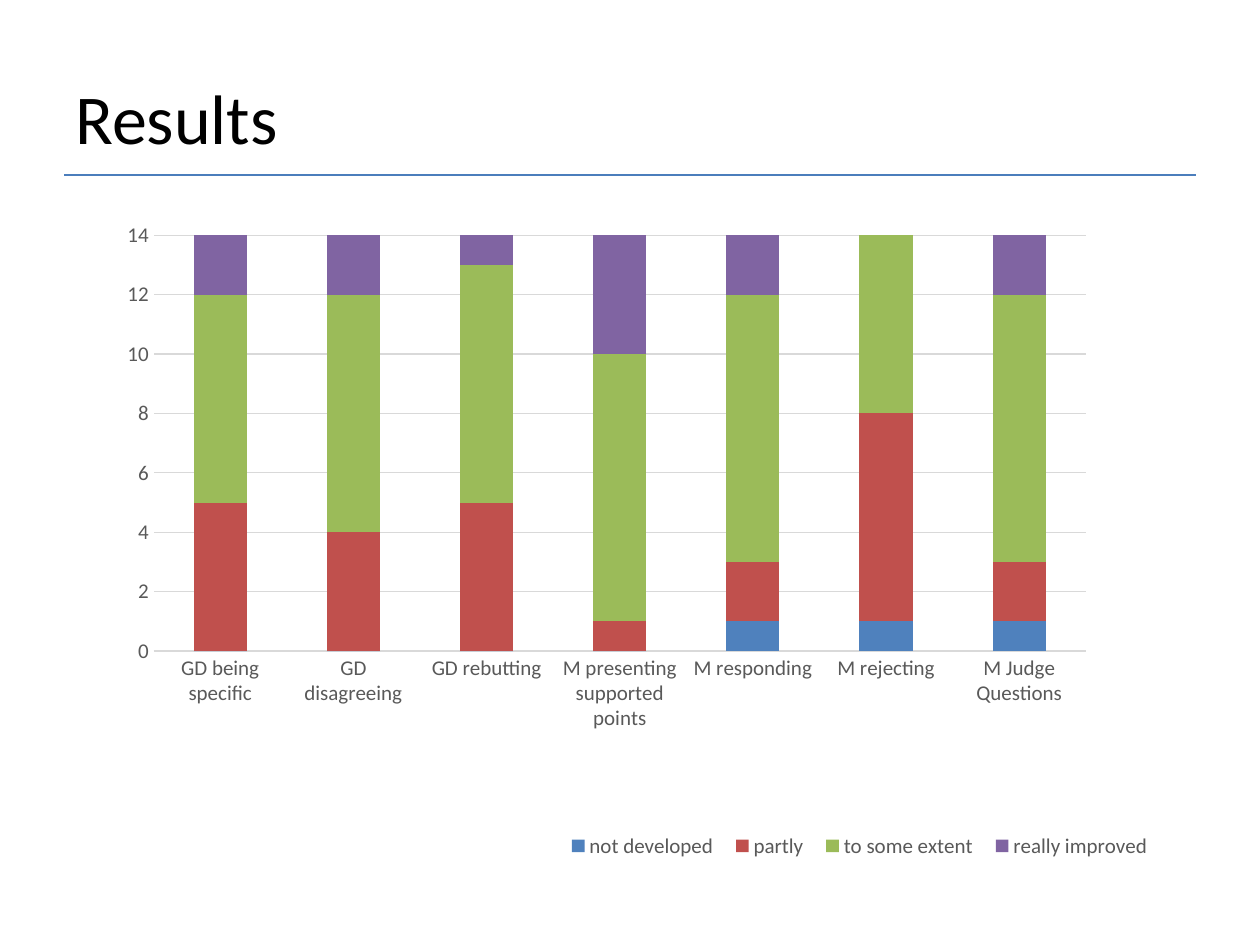
from lxml.etree import SubElement
from pptx import Presentation
from pptx.chart.data import CategoryChartData
from pptx.dml.color import RGBColor
from pptx.enum.chart import XL_CHART_TYPE, XL_LEGEND_POSITION, XL_TICK_MARK
from pptx.enum.shapes import MSO_CONNECTOR
from pptx.enum.text import MSO_ANCHOR
from pptx.oxml.ns import qn
from pptx.util import Cm, Pt

CATEGORIES = [
    "GD being specific", "GD disagreeing", "GD rebutting",
    "M presenting supported points", "M responding", "M rejecting",
    "M Judge Questions",
]
SERIES = [
    ("not developed", "4F81BD", (0, 0, 0, 0, 1, 1, 1)),
    ("partly", "C0504D", (5, 4, 5, 1, 2, 7, 2)),
    ("to some extent", "9BBB59", (7, 8, 8, 9, 9, 7, 9)),
    ("really improved", "8064A2", (9, 2, 1, 4, 2, 2, 2)),
]


def color(value):
    return RGBColor.from_string(value)


def style_font(font, name="Calibri", size=12, fill="000000"):
    font.name = name
    font.size = Pt(size)
    font.color.rgb = color(fill)


def write(p, text, **fmt):
    r = p.add_run()
    r.text = text
    style_font(r.font, **fmt)


def style_line(line, fill, width=0.75):
    line.color.rgb = color(fill)
    line.width = Pt(width)


def place(parent, index, x, y, w, h, inner=False):
    for old in parent.findall(qn("c:layout")):
        parent.remove(old)
    layout = SubElement(parent, qn("c:layout"))
    parent.insert(index, layout)
    manual = SubElement(layout, qn("c:manualLayout"))
    settings = [("layoutTarget", "inner")] if inner else []
    settings += [("xMode", "edge"), ("yMode", "edge"),
                 ("x", x), ("y", y), ("w", w), ("h", h)]
    for tag, value in settings:
        SubElement(manual, qn(f"c:{tag}")).set("val", str(value))


class SlideBuilder:
    font = "Calibri"
    muted = "595959"
    grid = "D9D9D9"
    rule_color = "4B7EBC"

    def __init__(self, prs):
        self.s = prs.slides.add_slide(prs.slide_layouts[6])

    def title(self, text, x, y, w, h):
        sp = self.s.shapes.add_textbox(Cm(x), Cm(y), Cm(w), Cm(h))
        tf = sp.text_frame
        tf.word_wrap = True
        tf.vertical_anchor = MSO_ANCHOR.MIDDLE
        write(tf.paragraphs[0], text, name=self.font, size=40)

    def rule(self, x1, x2, y):
        sp = self.s.shapes.add_connector(
            MSO_CONNECTOR.STRAIGHT, Cm(x1), Cm(y), Cm(x2), Cm(y))
        style_line(sp.line, self.rule_color)
        SubElement(sp.element.spPr, qn("a:effectLst"))

    def stacked_chart(self, categories, series, x, y, w, h):
        data = CategoryChartData()
        data.categories = categories
        for name, _, values in series:
            data.add_series(name, values)
        chart = self.s.shapes.add_chart(
            XL_CHART_TYPE.COLUMN_STACKED,
            Cm(x), Cm(y), Cm(w), Cm(h), data).chart
        style_font(chart.font, self.font, 10)
        chart.has_title = False

        plot = chart.plots[0]
        plot.gap_width = 150
        plot.overlap = 100
        plot.vary_by_categories = False
        for ser, (_, fill, _) in zip(plot.series, series):
            ser.format.fill.solid()
            ser.format.fill.fore_color.rgb = color(fill)

        for axis in (chart.category_axis, chart.value_axis):
            axis.major_tick_mark = XL_TICK_MARK.NONE
            axis.minor_tick_mark = XL_TICK_MARK.NONE
            style_font(axis.tick_labels.font, self.font, 12, self.muted)
        style_line(chart.category_axis.format.line, self.grid)
        axis = chart.value_axis
        axis.minimum_scale, axis.maximum_scale, axis.major_unit = 0, 14, 2
        axis.format.line.fill.background()
        axis.has_major_gridlines = True
        style_line(axis.major_gridlines.format.line, self.grid)

        chart.has_legend = True
        chart.legend.position = XL_LEGEND_POSITION.BOTTOM
        chart.legend.include_in_layout = False
        style_font(chart.legend.font, self.font, 12, self.muted)
        root = chart.element
        place(root.find(".//" + qn("c:plotArea")), 0,
              0.092, 0.03, 0.783, 0.596, inner=True)
        place(root.find(".//" + qn("c:legend")), 1, 0.43, 0.88, 0.51, 0.05)


def main():
    prs = Presentation()
    prs.slide_width, prs.slide_height = Cm(25.4), Cm(19.05)
    slide = SlideBuilder(prs)
    slide.rule(1.3, 24.1, 3.53)
    slide.title("Results", 1.27, 0.76, 22.86, 3.18)
    slide.stacked_chart(CATEGORIES, SERIES, 0.89, 4.32, 24, 14.07)
    prs.save("out.pptx")


if __name__ == "__main__":
    main()
